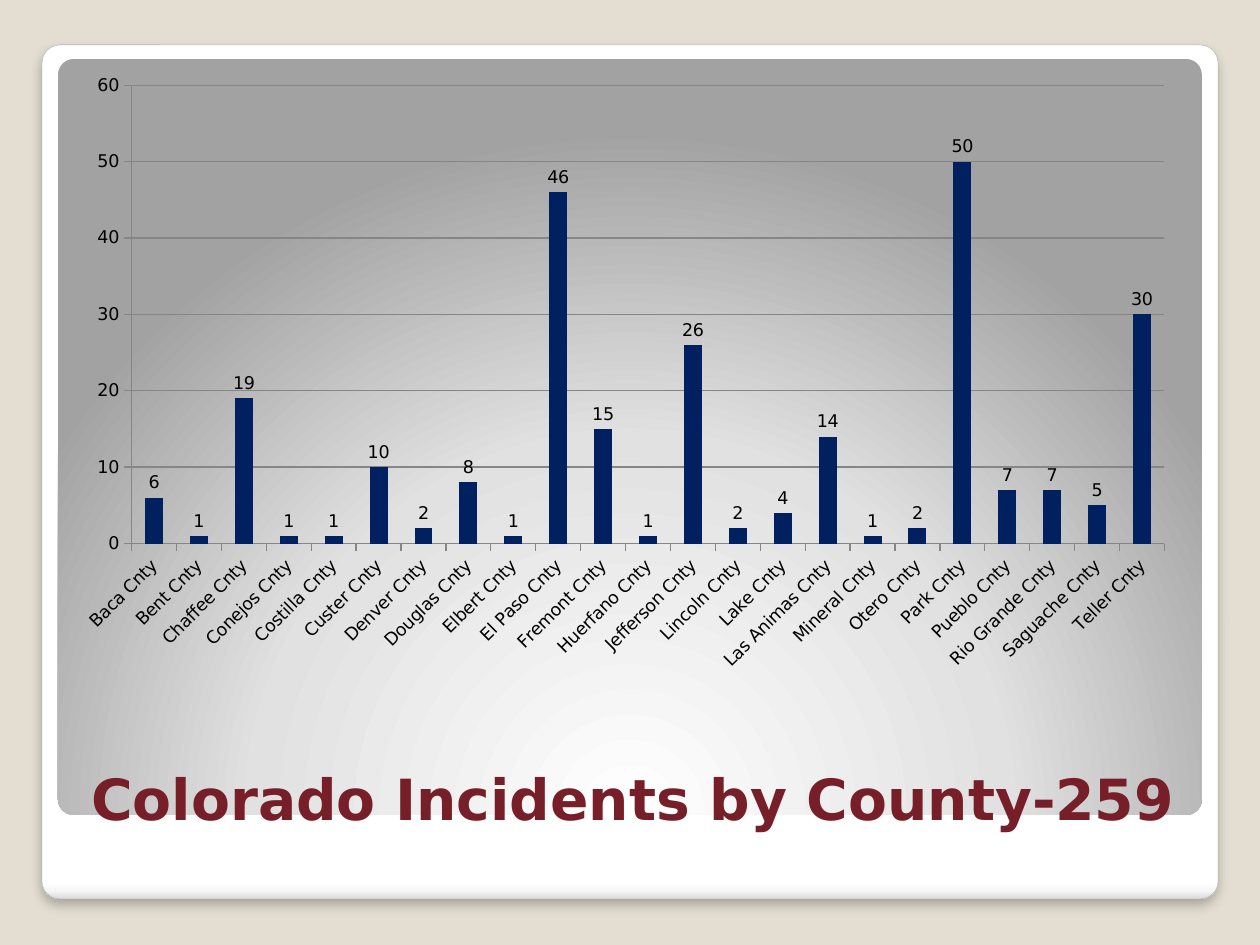
from lxml import etree
from pptx import Presentation
from pptx.chart.data import CategoryChartData
from pptx.dml.color import RGBColor
from pptx.enum.chart import XL_CHART_TYPE, XL_LABEL_POSITION, XL_TICK_MARK
from pptx.enum.shapes import MSO_SHAPE
from pptx.enum.text import MSO_ANCHOR, MSO_AUTO_SIZE, PP_ALIGN
from pptx.oxml import parse_xml
from pptx.oxml.ns import nsdecls, qn
from pptx.util import Emu, Pt

ROUNDED = MSO_SHAPE.ROUNDED_RECTANGLE
COLUMN = XL_CHART_TYPE.COLUMN_CLUSTERED
OUTSIDE_END = XL_LABEL_POSITION.OUTSIDE_END
TICK_OUT = XL_TICK_MARK.OUTSIDE
TICK_NONE = XL_TICK_MARK.NONE
BOTTOM = MSO_ANCHOR.BOTTOM
NO_FIT = MSO_AUTO_SIZE.NONE
CENTER = PP_ALIGN.CENTER

SAND = RGBColor(0xE3, 0xDE, 0xD1)
EDGE = RGBColor(0xA4, 0xA4, 0xA4)
MAROON = RGBColor(0x77, 0x1F, 0x28)
NAVY = RGBColor(0x00, 0x20, 0x60)
BLACK = RGBColor(0x00, 0x00, 0x00)
GRID = RGBColor(0x86, 0x86, 0x86)
WHITE = RGBColor(0xFF, 0xFF, 0xFF)
CARD_STOPS = [
    (0, WHITE), (98, WHITE),
    (99, RGBColor(0xF7, 0xF7, 0xF7)), (100, RGBColor(0xDA, 0xDA, 0xDA)),
]
PANEL_STOPS = [
    (0, WHITE), (55, RGBColor(0xE1, 0xE1, 0xE1)), (100, RGBColor(0xA2, 0xA2, 0xA2)),
]
LINEAR = '<a:lin ang="5400000" scaled="0"/>'
RADIAL = ('<a:path path="circle">'
          '<a:fillToRect l="50000" t="175000" r="50000" b="-75000"/></a:path>')
FONT = "DejaVu Sans"

INCIDENTS = {
    "Baca": 6, "Bent": 1, "Chaffee": 19, "Conejos": 1, "Costilla": 1, "Custer": 10,
    "Denver": 2, "Douglas": 8, "Elbert": 1, "El Paso": 46, "Fremont": 15,
    "Huerfano": 1, "Jefferson": 26, "Lincoln": 2, "Lake": 4, "Las Animas": 14,
    "Mineral": 1, "Otero": 2, "Park": 50, "Pueblo": 7, "Rio Grande": 7,
    "Saguache": 5, "Teller": 30,
}


def px(n):
    return Emu(round(n * 914400 / 126))


def place(box):
    return [px(n) for n in box]


def set_font(font, size, color, bold=False):
    font.name = FONT
    font.size = Pt(size)
    font.bold = bold
    font.color.rgb = color


def add_rounded(slide, box, stops, direction):
    sp = slide.shapes.add_shape(ROUNDED, *place(box))
    sp.adjustments[0] = 0.021
    sp.shadow.inherit = False
    sp.line.fill.background()
    stop_xml = "".join(
        f'<a:gs pos="{pos * 1000}"><a:srgbClr val="{color}"/></a:gs>'
        for pos, color in stops)
    gradient = parse_xml(
        f'<a:gradFill {nsdecls("a")} rotWithShape="1">'
        f'<a:gsLst>{stop_xml}</a:gsLst>{direction}</a:gradFill>')
    sp._element.spPr.find(qn("a:prstGeom")).addnext(gradient)
    return sp


def add_frame(slide, box):
    x, y, w, h = box
    card = add_rounded(slide, box, CARD_STOPS, LINEAR)
    card.line.color.rgb = EDGE
    card.line.width = Pt(0.16)
    effects = card._element.spPr.find(qn("a:effectLst"))
    shadow = etree.SubElement(effects, qn("a:outerShdw"), blurRad=str(Pt(6)),
                              dist=str(Pt(4)), dir="5400000", rotWithShape="0")
    black = etree.SubElement(shadow, qn("a:srgbClr"), val=str(BLACK))
    etree.SubElement(black, qn("a:alpha"), val="25000")
    add_rounded(slide, (x + 16, y + 14, w - 32, h - 98), PANEL_STOPS, RADIAL)


def add_title(slide, box, text):
    sp = slide.shapes.title
    sp.left, sp.top, sp.width, sp.height = place(box)
    slide.shapes._spTree.append(sp._element)
    tf = sp.text_frame
    tf.text = text
    tf.word_wrap = True
    tf.auto_size = NO_FIT
    tf.vertical_anchor = BOTTOM
    tf.margin_left = tf.margin_right = tf.margin_top = tf.margin_bottom = 0
    p = tf.paragraphs[0]
    p.alignment = CENTER
    set_font(p.runs[0].font, 32.4, MAROON, bold=True)


def add_county_chart(slide, box):
    data = CategoryChartData()
    data.categories = [f"{county} Cnty" for county in INCIDENTS]
    data.add_series("Series 1", INCIDENTS.values())
    chart = slide.shapes.add_chart(COLUMN, *place(box), data).chart
    chart.has_legend = False
    chart.has_title = False
    set_font(chart.font, 10, BLACK)

    plot = chart.plots[0]
    plot.gap_width = 150
    plot.vary_by_categories = False
    plot.has_data_labels = True
    plot.data_labels.show_value = True
    plot.data_labels.position = OUTSIDE_END
    fill = plot.series[0].format.fill
    fill.solid()
    fill.fore_color.rgb = NAVY

    values = chart.value_axis
    values.minimum_scale, values.maximum_scale, values.major_unit = 0, 60, 10
    values.has_major_gridlines = True
    for axis in (chart.category_axis, values):
        axis.major_tick_mark = TICK_OUT
        axis.minor_tick_mark = TICK_NONE
        set_font(axis.tick_labels.font, 10, BLACK)
    for part in (chart.category_axis, values, values.major_gridlines):
        part.format.line.color.rgb = GRID
        part.format.line.width = Pt(0.75)
    body = chart.category_axis._element.find(qn("c:txPr")).find(qn("a:bodyPr"))
    body.set("rot", "-2700000")


def main():
    prs = Presentation()
    prs.slide_width, prs.slide_height = px(1260), px(945)
    slide = prs.slides.add_slide(prs.slide_layouts[5])
    slide.background.fill.solid()
    slide.background.fill.fore_color.rgb = SAND
    add_frame(slide, (42, 45, 1176, 854))
    add_title(slide, (69, 756, 1128, 76), "Colorado Incidents by County-259")
    add_county_chart(slide, (63, 63, 1124, 620))
    prs.save("out.pptx")


if __name__ == "__main__":
    main()
